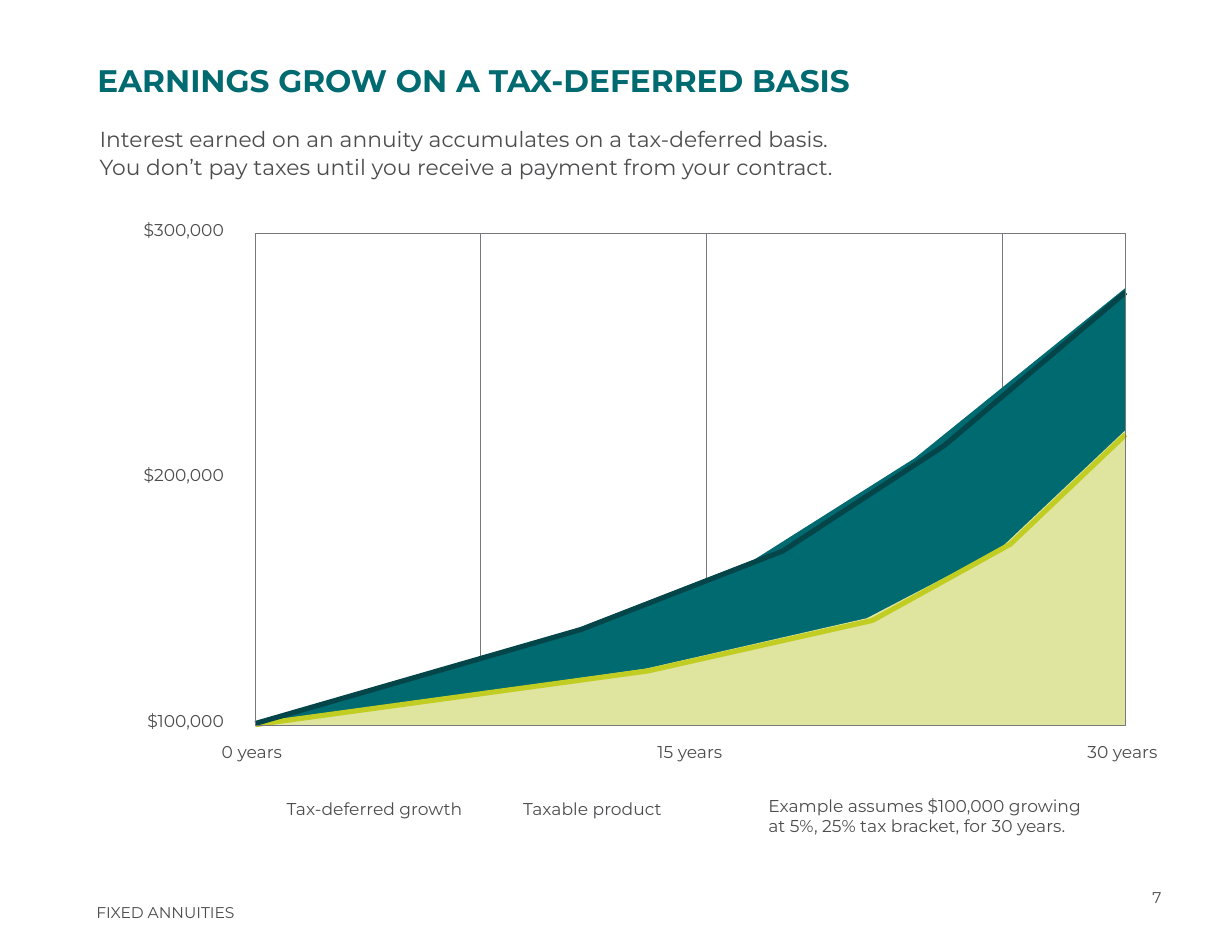
import pptx
import pptx.util
import pptx.dml.color
import pptx.enum.shapes
import pptx.enum.text
import lxml.etree
from dataclasses import dataclass

Inches = pptx.util.Inches
Align = pptx.enum.text.PP_ALIGN


@dataclass(frozen=True)
class Theme:
    font: str = "Montserrat"
    teal: str = "006A71"
    dark_teal: str = "034549"
    lime: str = "C2CD23"
    pale_lime: str = "DFE49E"
    grid: str = "77787B"
    text: str = "4D4D4F"
    title_size: float = 20
    intro_size: float = 14
    label_size: float = 11
    footer_size: float = 10
    grid_width: float = 0.5
    curve_width: float = 3.3


theme = Theme()


def color(value):
    return pptx.dml.color.RGBColor.from_string(value)


def write(text, left, top, width, height, box=None, size=theme.label_size,
          ink=theme.text, bold=False, align=Align.LEFT, spacing=None):
    box = box or page.shapes.add_textbox(0, 0, 0, 0)
    box.left, box.top = Inches(left), Inches(top)
    box.width, box.height = Inches(width), Inches(height)
    frame = box.text_frame
    frame.margin_left = frame.margin_top = frame.margin_right = frame.margin_bottom = 0
    frame.auto_size = pptx.enum.text.MSO_AUTO_SIZE.NONE
    frame.vertical_anchor = pptx.enum.text.MSO_ANCHOR.TOP
    frame.word_wrap = True
    para = frame.paragraphs[0]
    para.alignment = align
    para.space_before = pptx.util.Pt(0)
    para.line_spacing = spacing or 1.0
    span = para.add_run()
    span.text = text
    span.font.name = theme.font
    span.font.size = pptx.util.Pt(size)
    span.font.bold = bold
    span.font.color.rgb = color(ink)


deck = pptx.Presentation()
deck.slide_width, deck.slide_height = Inches(11), Inches(8.5)
page = deck.slides.add_slide(deck.slide_layouts[5])

write("EARNINGS GROW ON A TAX-DEFERRED BASIS", 0.87, 0.55, 8, 0.36,
      box=page.shapes.title, size=theme.title_size, ink=theme.teal, bold=True)
write("Interest earned on an annuity accumulates on a tax-deferred basis. "
      "You don’t pay taxes until you receive a payment from your contract.",
      0.89, 1.11, 6.6, 0.55, size=theme.intro_size, spacing=1.07)

plot_left, plot_right, plot_top, plot_bottom = 2.28, 10.05, 2.08, 6.48

for x in (4.29, 6.31, 8.95):
    line = page.shapes.add_connector(
        pptx.enum.shapes.MSO_CONNECTOR.STRAIGHT,
        Inches(x), Inches(plot_top), Inches(x), Inches(plot_bottom))
    line.line.color.rgb = color(theme.grid)
    line.line.width = pptx.util.Pt(theme.grid_width)
    lxml.etree.SubElement(line._element.spPr, pptx.oxml.ns.qn("a:effectLst"))

baseline = [(plot_right, plot_bottom), (plot_left, plot_bottom)]
deferred_area = [(2.28, 6.47), (5.01, 5.67), (6.73, 5), (8.17, 4.09), (10.05, 2.57)]
taxable_area = [(2.28, 6.47), (5.77, 5.97), (7.74, 5.52), (8.93, 4.9), (10.05, 3.84)]
taxable_curve = [(2.28, 6.47), (5.79, 5.99), (7.79, 5.54), (9.02, 4.86), (10.05, 3.88)]
deferred_curve = [(2.28, 6.46), (5.19, 5.62), (6.99, 4.92), (8.43, 3.98), (10.05, 2.61)]

for points, ink, is_area in (
    (deferred_area + baseline, theme.teal, True),
    (taxable_area + baseline, theme.pale_lime, True),
    (taxable_curve, theme.lime, False),
    (deferred_curve, theme.dark_teal, False),
):
    corners = [(Inches(x), Inches(y)) for x, y in points]
    builder = page.shapes.build_freeform(*corners[0])
    builder.add_line_segments(corners[1:], close=is_area)
    shape = builder.convert_to_shape()
    shape.shadow.inherit = False
    if is_area:
        shape.fill.solid()
        shape.fill.fore_color.rgb = color(ink)
        shape.line.fill.background()
    else:
        shape.fill.background()
        shape.line.color.rgb = color(ink)
        shape.line.width = pptx.util.Pt(theme.curve_width)

border = page.shapes.add_shape(
    pptx.enum.shapes.MSO_SHAPE.RECTANGLE, Inches(plot_left), Inches(plot_top),
    Inches(plot_right - plot_left), Inches(plot_bottom - plot_top))
border.shadow.inherit = False
border.fill.background()
border.line.color.rgb = color(theme.grid)
border.line.width = pptx.util.Pt(theme.grid_width)

for row, amount in enumerate(("$300,000", "$200,000", "$100,000")):
    write(amount, 1.1, 1.96 + 2.19 * row, 0.9, 0.2, align=Align.RIGHT)

for text, left, top, width in (
    ("0 years", 1.98, 6.62, 0.7),
    ("15 years", 5.87, 6.62, 0.75),
    ("30 years", 9.71, 6.62, 0.8),
    ("Tax-deferred growth", 2.56, 7.13, 1.8),
    ("Taxable product", 4.67, 7.13, 1.5),
):
    write(text, left, top, width, 0.2)

write("Example assumes $100,000 growing at 5%, 25% tax bracket, for 30 years.",
      6.86, 7.1, 2.89, 0.39)
write("FIXED ANNUITIES", 0.86, 8.06, 1.5, 0.19, size=theme.footer_size)
write("7", 10.29, 7.93, 0.15, 0.19, size=theme.footer_size)

deck.save("out.pptx")
